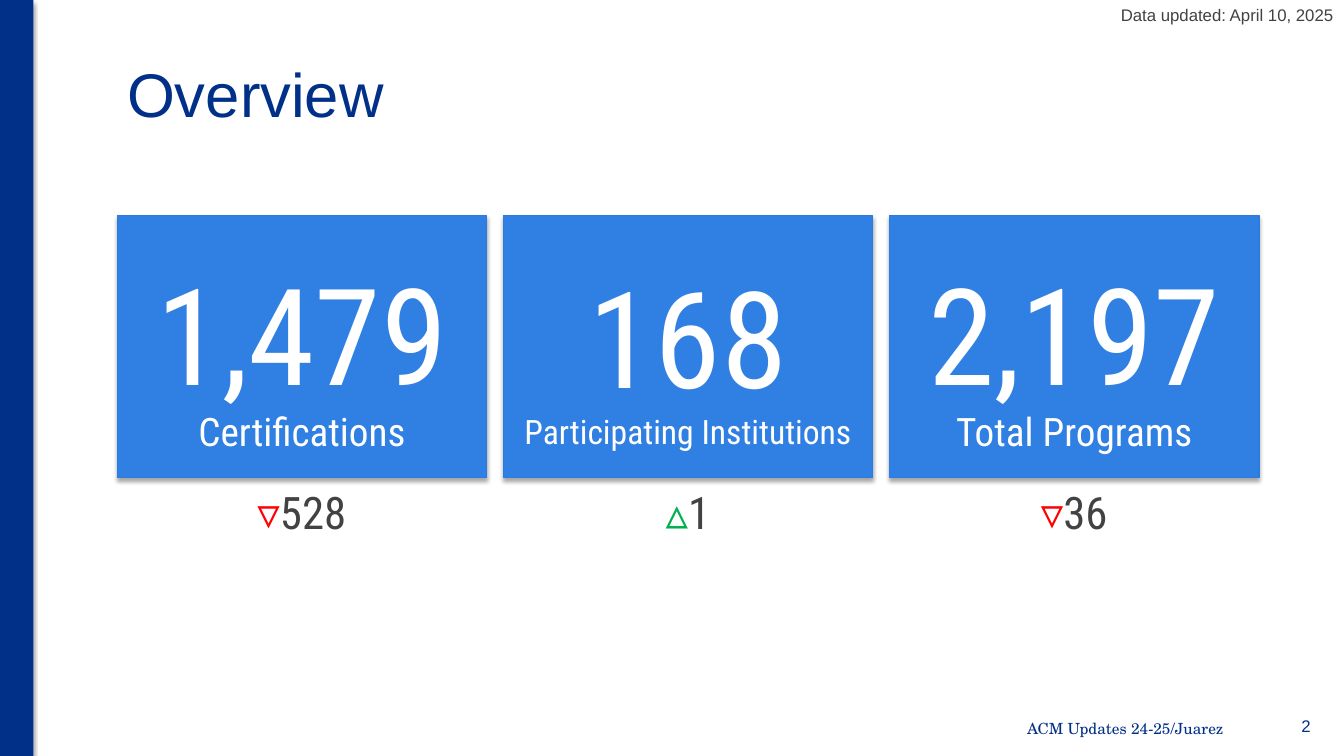
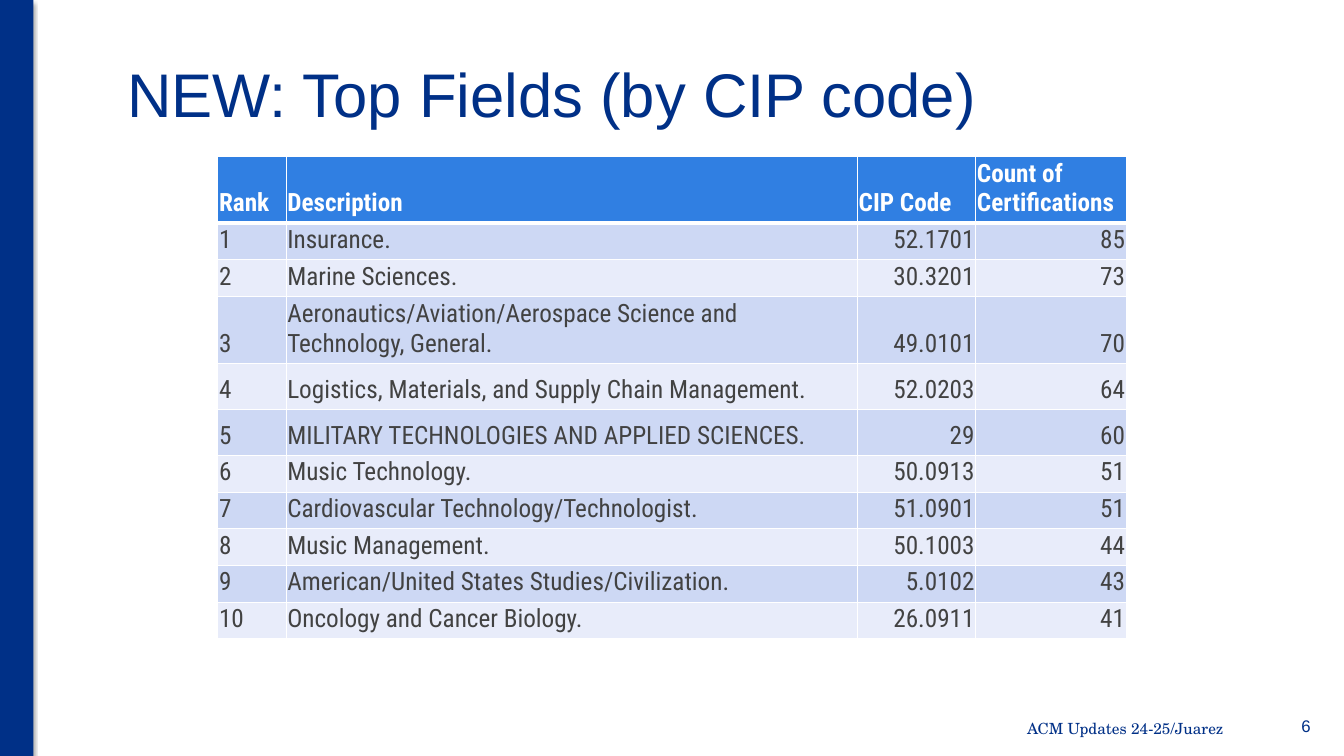
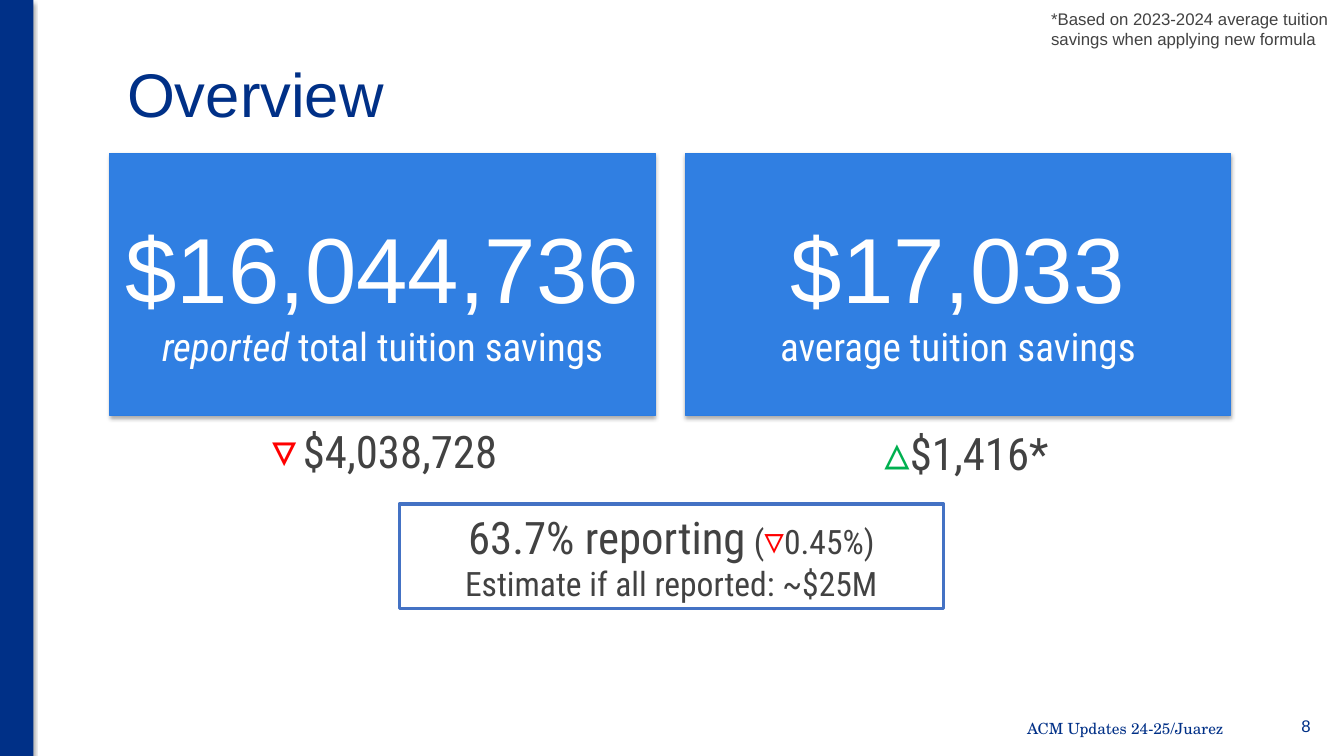
from collections import namedtuple

from lxml import etree
from pptx import Presentation
from pptx.dml.color import RGBColor
from pptx.enum.shapes import MSO_SHAPE
from pptx.enum.text import MSO_ANCHOR, PP_ALIGN
from pptx.oxml.ns import qn
from pptx.util import Cm, Pt

RECT = MSO_SHAPE.RECTANGLE
TOP, MIDDLE, BOTTOM = MSO_ANCHOR.TOP, MSO_ANCHOR.MIDDLE, MSO_ANCHOR.BOTTOM
LEFT, CENTER, RIGHT = PP_ALIGN.LEFT, PP_ALIGN.CENTER, PP_ALIGN.RIGHT

NAVY = RGBColor(0x00, 0x30, 0x87)
BLUE = RGBColor(0x30, 0x7F, 0xE2)
EDGE = RGBColor(0x2B, 0x7C, 0xE1)
FRAME = RGBColor(0x44, 0x72, 0xC4)
WHITE = RGBColor(0xFF, 0xFF, 0xFF)
GRAY = RGBColor(0x42, 0x42, 0x42)
GREEN = RGBColor(0x00, 0xB0, 0x50)
RED = RGBColor(0xFF, 0x00, 0x00)
DARK = RGBColor(0xCD, 0xD8, 0xF4)
LIGHT = RGBColor(0xE8, 0xEC, 0xFA)

SANS = "Arial"
SLIM = "Roboto Condensed"
SERIF = "TeX Gyre Schola"

CARD_TALL = 6.6
DELTA_WIDE = 8.18

Run = namedtuple("Run", "text size color font bold italic",
                 defaults=(GRAY, SLIM, False, False))

HEAD = ("Rank", "Description", "CIP Code", "Count of Certifications")
FIELDS = (
    ("Insurance.", "52.1701", "85"),
    ("Marine Sciences.", "30.3201", "73"),
    ("Aeronautics/Aviation/Aerospace Science and Technology, General.",
     "49.0101", "70"),
    ("Logistics, Materials, and Supply Chain Management.", "52.0203", "64"),
    ("MILITARY TECHNOLOGIES AND APPLIED SCIENCES.", "29", "60"),
    ("Music Technology.", "50.0913", "51"),
    ("Cardiovascular Technology/Technologist.", "51.0901", "51"),
    ("Music Management.", "50.1003", "44"),
    ("American/United States Studies/Civilization.", "5.0102", "43"),
    ("Oncology and Cancer Biology.", "26.0911", "41"),
)
COLS = (1.72, 14.4, 2.98, 3.79)
ROWS = (1.67, 0.92, 0.92, 1.69, 1.16, 1.16) + (0.92,) * 5
ALIGNS = (LEFT, LEFT, RIGHT, RIGHT)


def style(font, run):
    font.name = run.font
    font.size = Pt(run.size)
    font.bold = run.bold
    font.italic = run.italic
    font.color.rgb = run.color


def write(frame, lines, align=LEFT, anchor=MIDDLE):
    frame.word_wrap = True
    frame.vertical_anchor = anchor
    for index, runs in enumerate(lines):
        para = frame.add_paragraph() if index else frame.paragraphs[0]
        para.alignment = align
        for run in runs:
            part = para.add_run()
            part.text = run.text
            if len(runs) > 1:
                style(part.font, run)
        if len(runs) == 1:
            style(para.font, runs[0])


def add_text(slide, box, lines, align=LEFT, anchor=MIDDLE):
    shape = slide.shapes.add_textbox(*map(Cm, box))
    write(shape.text_frame, lines, align, anchor)
    return shape


def add_rect(slide, box):
    shape = slide.shapes.add_shape(RECT, *map(Cm, box))
    shape.shadow.inherit = False
    return shape


def add_block(slide, box, color):
    shape = add_rect(slide, box)
    shape.fill.solid()
    shape.fill.fore_color.rgb = color
    effects = shape.element.spPr.find(qn("a:effectLst"))
    shade = etree.SubElement(effects, qn("a:outerShdw"),
                             blurRad=str(Pt(3.1)), dist=str(Pt(1.8)),
                             dir="5400000", rotWithShape="0")
    tint = etree.SubElement(shade, qn("a:srgbClr"), val="000000")
    etree.SubElement(tint, qn("a:alpha"), val="35000")
    return shape


def add_card(slide, left, top, wide, lines, pitch=1.0):
    card = add_block(slide, (left, top, wide, CARD_TALL), BLUE)
    card.line.color.rgb = EDGE
    card.line.width = Pt(0.75)
    frame = card.text_frame
    frame.margin_top = Cm(0.43)
    write(frame, lines, CENTER)
    frame.paragraphs[-1].line_spacing = pitch


def add_delta(slide, left, top, tall, mark, text):
    value = Run(text, 32)
    add_text(slide, (left, top, DELTA_WIDE, tall), [[mark, value]], CENTER)


def add_note(slide, top, tall, text, align):
    add_text(slide, (26.24, top, 7.62, tall), [[Run(text, 12, GRAY, SANS)]],
             align, TOP)


def add_slide(deck, layout, title, number):
    slide = deck.slides.add_slide(layout)
    write(slide.shapes.title.text_frame, [[Run(title, 44, NAVY, SANS)]])
    add_text(slide, (31.17, 17.73, 2.11, 1.14),
             [[Run(number, 12, NAVY, SANS)]], RIGHT)
    return slide


def set_layout(layout, slide):
    title = layout.placeholders[0]
    title.left, title.top, title.width, title.height = map(
        Cm, (2.95, 0.76, 28.68, 3.18))
    band = add_block(slide, (0, 0, 0.84, 19.05), NAVY)
    band.line.fill.background()
    foot = add_text(slide, (19.43, 17.78, 11.66, 1.14),
                    [[Run("ACM Updates 24-25/Juarez", 11, NAVY, SERIF)]],
                    RIGHT)
    for shape in (band, foot):
        layout.shapes.element.append(shape.element)


def set_edges(cell, top, low):
    props = cell._tc.get_or_add_tcPr()
    sides = (("L", 1), ("R", 1), ("T", top), ("B", low))
    for index, (side, width) in enumerate(sides):
        line = etree.Element(qn("a:ln" + side), w=str(Pt(width)))
        fill = etree.SubElement(line, qn("a:solidFill"))
        etree.SubElement(fill, qn("a:srgbClr"), val=str(WHITE))
        props.insert(index, line)


def set_cell(cell, row, col, text):
    cell.margin_left = cell.margin_right = cell.margin_top = Cm(0.03)
    cell.margin_bottom = Cm(0.13)
    cell.vertical_anchor = BOTTOM
    cell.fill.solid()
    if row:
        cell.fill.fore_color.rgb = DARK if row % 2 else LIGHT
    else:
        cell.fill.fore_color.rgb = BLUE
    para = cell.text_frame.paragraphs[0]
    para.text = text
    para.alignment = ALIGNS[col] if row else LEFT
    style(para.font, Run(text, 18, GRAY if row else WHITE, bold=not row))
    set_edges(cell, 3 if row == 1 else 1, 1 if row else 3)


def add_grid(slide):
    data = [HEAD] + [(str(rank), *field)
                     for rank, field in enumerate(FIELDS, 1)]
    box = (5.49, 3.94, sum(COLS), sum(ROWS))
    table = slide.shapes.add_table(len(ROWS), len(COLS),
                                   *map(Cm, box)).table
    for col, wide in zip(table.columns, COLS):
        col.width = Cm(wide)
    for row, tall in zip(table.rows, ROWS):
        row.height = Cm(tall)
    for row, texts in enumerate(data):
        for col, text in enumerate(texts):
            set_cell(table.cell(row, col), row, col, text)


def fill_counts(slide):
    up, down = Run("▵", 32, GREEN), Run("▿", 32, RED)
    cards = (("1,479", "Certifications", 28, down, "528"),
             ("168", "Participating Institutions", 24, up, "1"),
             ("2,197", "Total Programs", 28, down, "36"))
    wide = 9.32
    for index, (count, label, size, mark, change) in enumerate(cards):
        left = 2.95 + index * 9.73
        add_card(slide, left, 5.44, wide,
                 [[Run(count, 96, WHITE)], [Run(label, size, WHITE)]], 0.9)
        add_delta(slide, left + (wide - DELTA_WIDE) / 2, 12.07, 1.63,
                  mark, change)
    add_note(slide, 0, 0.76, "Data updated: April 10, 2025", RIGHT)


def fill_savings(slide):
    cards = (("$16,044,736", [Run("reported ", 28, WHITE, italic=True),
                              Run("total tuition savings", 28, WHITE)]),
             ("$17,033", [Run("average tuition savings", 28, WHITE)]))
    for index, (amount, label) in enumerate(cards):
        add_card(slide, 2.77 + index * 14.5, 3.86, 13.74,
                 [[Run(amount, 66, WHITE, SANS)], label])
    add_delta(slide, 5.54, 10.39, 1.8, Run("▿", 36, RED, SANS), "$4,038,728")
    add_delta(slide, 20.27, 10.46, 1.8, Run("▵", 36, GREEN), "$1,416*")
    share = add_rect(slide, (10.06, 12.7, 13.72, 2.64))
    share.fill.background()
    share.line.color.rgb = FRAME
    share.line.width = Pt(2.25)
    write(share.text_frame,
          [[Run("63.7% reporting", 32), Run(" (", 24), Run("▿", 28, RED),
            Run("0.45%)", 24)],
           [Run("Estimate if all reported: ~$25M", 24)]], CENTER)
    add_note(slide, 0.1, 1.27, "*Based on 2023-2024 average tuition savings "
             "when applying new formula", LEFT)


def main():
    deck = Presentation()
    deck.slide_width, deck.slide_height = Cm(33.87), Cm(19.05)
    layout = deck.slide_layouts[5]
    counts = add_slide(deck, layout, "Overview", "2")
    set_layout(layout, counts)
    fill_counts(counts)
    add_grid(add_slide(deck, layout, "NEW: Top Fields (by CIP code)", "6"))
    fill_savings(add_slide(deck, layout, "Overview", "8"))
    deck.save("out.pptx")


if __name__ == "__main__":
    main()
